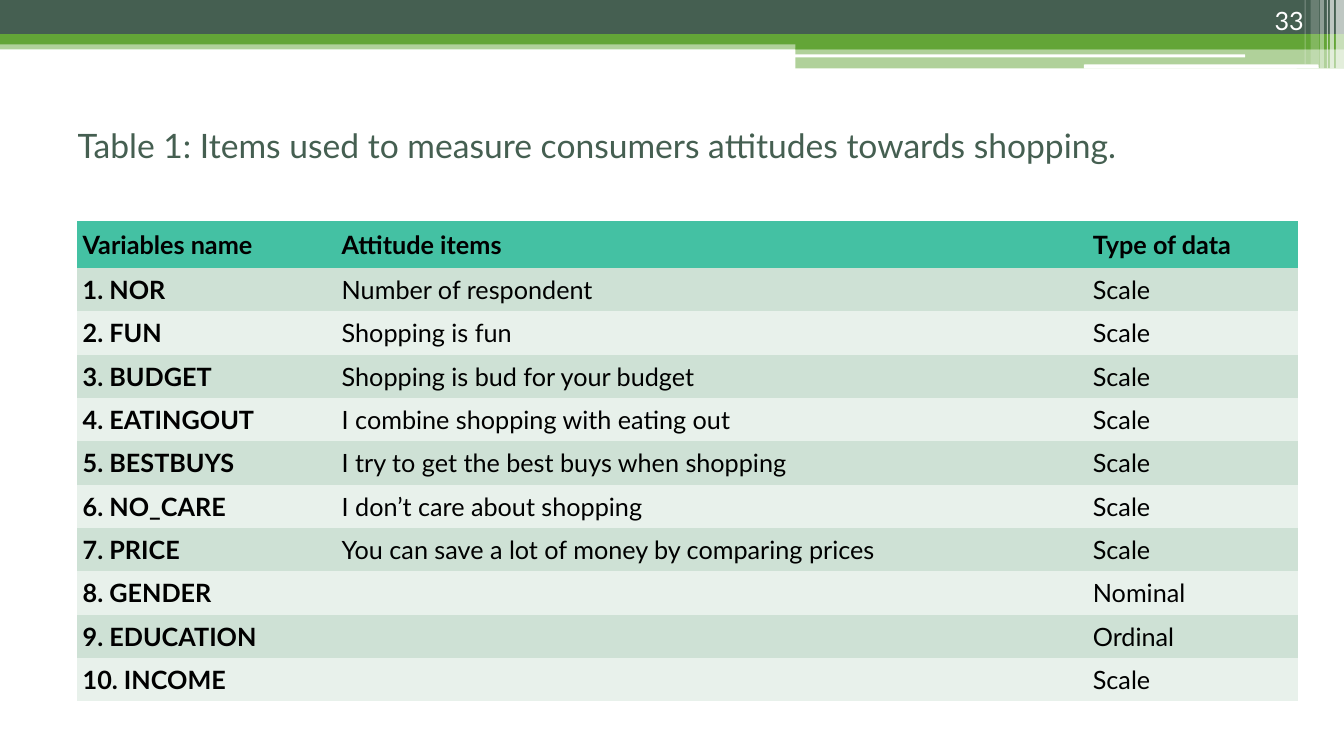
from lxml import etree
from pptx import Presentation
from pptx.dml.color import RGBColor
from pptx.enum.shapes import MSO_SHAPE
from pptx.enum.text import MSO_ANCHOR, PP_ALIGN
from pptx.oxml.ns import qn
from pptx.util import Inches, Pt

RECT, ROUND = MSO_SHAPE.RECTANGLE, MSO_SHAPE.ROUNDED_RECTANGLE
MIDDLE, BOTTOM = MSO_ANCHOR.MIDDLE, MSO_ANCHOR.BOTTOM
LEFT, RIGHT = PP_ALIGN.LEFT, PP_ALIGN.RIGHT

DARK = RGBColor(0x45, 0x5F, 0x51)
GREEN = RGBColor(0x63, 0xA5, 0x37)
WHITE = RGBColor(0xFF, 0xFF, 0xFF)
BLACK = RGBColor(0x00, 0x00, 0x00)
TEAL = RGBColor(0x44, 0xC1, 0xA3)
MINT = RGBColor(0xCE, 0xE1, 0xD5)
PALE = RGBColor(0xE8, 0xF1, 0xEB)
FONT = "Lato"
PLAIN = "{2D5ABB26-0587-4C30-8999-92F81FD0307C}"  # table style without grid


def write(frame, text, size=18, color=BLACK, bold=False, align=LEFT):
    par = frame.paragraphs[0]
    par.alignment = align
    run = par.add_run()
    run.text = text
    font = run.font
    font.name, font.size, font.bold = FONT, Pt(size), bold
    font.color.rgb = color


def add_bar(box, color, alpha=100, kind=RECT):
    bar = slide.shapes.add_shape(kind, *[Inches(n) for n in box])
    bar.shadow.inherit = False
    bar.line.fill.background()
    bar.fill.solid()
    bar.fill.fore_color.rgb = color
    if alpha < 100:
        tint = bar.fill._xPr.find(".//" + qn("a:srgbClr"))
        etree.SubElement(tint, qn("a:alpha")).set("val", str(alpha * 1000))


deck = Presentation()
deck.slide_width, deck.slide_height = Inches(13.33), Inches(7.5)
slide = deck.slides.add_slide(deck.slide_layouts[5])

# Header bands
add_bar((0, 0.4, 13.33, 0.09), GREEN, 50)
add_bar((0, 0, 13.33, 0.34), DARK)
add_bar((0, 0.34, 13.33, 0.1), GREEN)
add_bar((7.89, 0.39, 5.44, 0.1), GREEN)
add_bar((7.89, 0.48, 5.44, 0.2), GREEN, 50)
add_bar((7.88, 0.54, 4.47, 0.03), WHITE, kind=ROUND)
add_bar((10.75, 0.64, 2.33, 0.04), WHITE, kind=ROUND)

# Light stripes at the right edge: left, width, height, opacity
stripes = [
    (13.25, 0.08, 0.68, 65), (13.19, 0.04, 0.68, 65), (13.16, 0.01, 0.68, 60),
    (13.09, 0.04, 0.68, 40), (13, 0.08, 0.64, 20), (12.94, 0.01, 0.64, 30),
]
for left, width, height, alpha in stripes:
    add_bar((left, 0, width, height), WHITE, alpha)

# Title
title = slide.shapes.title
title.left, title.top = Inches(0.67), Inches(0.85)
title.width, title.height = Inches(12), Inches(1.17)
title.text_frame.vertical_anchor = MIDDLE
write(title.text_frame,
      "Table 1: Items used to measure consumers attitudes towards shopping.",
      size=24, color=DARK)

# Page number
page = slide.shapes.add_textbox(Inches(11.92), Inches(0), Inches(1.11), Inches(0.4))
page.text_frame.word_wrap = True
page.text_frame.vertical_anchor = BOTTOM
write(page.text_frame, "33", color=WHITE, align=RIGHT)

# Table of variables
rows = [
    ("Variables name", "Attitude items", "Type of data"),
    ("1. NOR", "Number of respondent", "Scale"),
    ("2. FUN", "Shopping is fun", "Scale"),
    ("3. BUDGET", "Shopping is bud for your budget", "Scale"),
    ("4. EATINGOUT", "I combine shopping with eating out", "Scale"),
    ("5. BESTBUYS", "I try to get the best buys when shopping", "Scale"),
    ("6. NO_CARE", "I don’t care about shopping", "Scale"),
    ("7. PRICE", "You can save a lot of money by comparing prices", "Scale"),
    ("8. GENDER", "", "Nominal"),
    ("9. EDUCATION", "", "Ordinal"),
    ("10. INCOME", "", "Scale"),
]
frame = slide.shapes.add_table(len(rows), 3, Inches(0.76), Inches(2.19),
                               Inches(12.1), Inches(4.78))
table = frame.table
table._tbl.tblPr.find(qn("a:tableStyleId")).text = PLAIN
for col, width in zip(table.columns, (2.57, 7.45, 2.09)):
    col.width = Inches(width)

for r, row in enumerate(rows):
    table.rows[r].height = Inches(0.43 if r else 0.47)
    shade = TEAL if r == 0 else MINT if r % 2 else PALE
    for c, text in enumerate(row):
        cell = table.cell(r, c)
        cell.fill.solid()
        cell.fill.fore_color.rgb = shade
        cell.vertical_anchor = MIDDLE
        cell.margin_left = cell.margin_right = Inches(0.06)
        cell.margin_top = cell.margin_bottom = Inches(0.06)
        if text:
            write(cell.text_frame, text, bold=r == 0 or c == 0)

deck.save("out.pptx")
